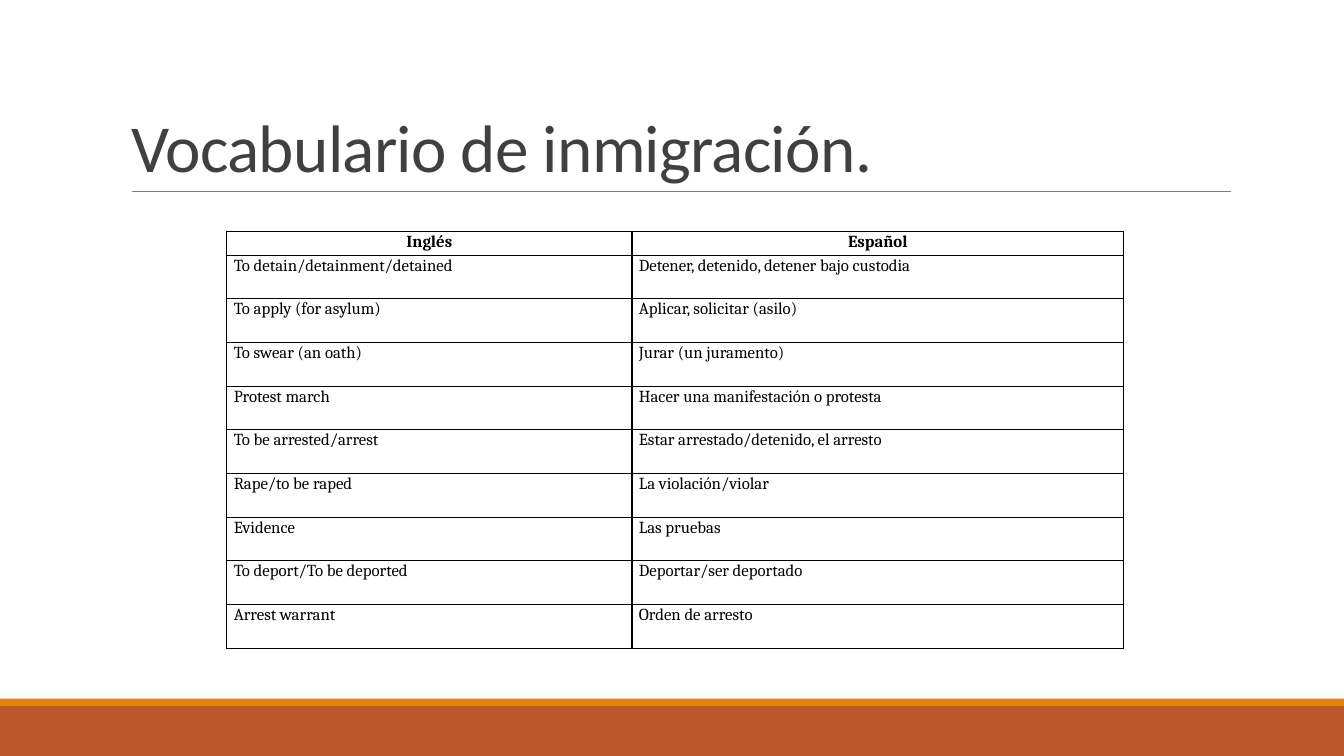
from lxml import etree
from pptx import Presentation
from pptx import util as u
from pptx.dml.color import RGBColor
from pptx.enum import shapes, text
from pptx.oxml.ns import qn

VOCABULARY = [
    ("Inglés", "Español"),
    ("To detain/detainment/detained", "Detener, detenido, detener bajo custodia"),
    ("To apply (for asylum)", "Aplicar, solicitar (asilo)"),
    ("To swear (an oath)", "Jurar (un juramento)"),
    ("Protest march", "Hacer una manifestación o protesta"),
    ("To be arrested/arrest", "Estar arrestado/detenido, el arresto"),
    ("Rape/to be raped", "La violación/violar"),
    ("Evidence", "Las pruebas"),
    ("To deport/To be deported", "Deportar/ser deportado"),
    ("Arrest warrant", "Orden de arresto"),
]
COLUMN_WIDTHS = (289.4, 351.4)
HEADER_HEIGHT, ROW_HEIGHT = 17.1, 31.2


def rgb(value):
    """Return the colour for a hex string."""
    return RGBColor.from_string(value)


def add_run(p, content, font, size, color, bold=False):
    """Add a formatted run to a paragraph."""
    r = p.add_run()
    r.text = content
    r.font.name, r.font.size, r.font.bold = font, u.Pt(size), bold
    r.font.color.rgb = rgb(color)
    return r


def add_title(s, content):
    """Fill and place the title placeholder."""
    sp = s.shapes.title
    sp.left, sp.top, sp.width, sp.height = u.Pt(86.4), u.Pt(22.6), u.Pt(792), u.Pt(114.2)
    tf = sp.text_frame
    tf.vertical_anchor = text.MSO_ANCHOR.BOTTOM
    p = tf.paragraphs[0]
    p.alignment = text.PP_ALIGN.LEFT
    p.line_spacing = 0.85
    r = add_run(p, content, "Calibri", 48, "404040")
    r.font._element.set("spc", "-50")


def add_band(s, top, height, color):
    """Add a full-width coloured band."""
    sp = s.shapes.add_shape(shapes.MSO_SHAPE.RECTANGLE, 0, u.Pt(top), u.Pt(960), u.Pt(height))
    sp.shadow.inherit = False
    sp.fill.solid()
    sp.fill.fore_color.rgb = rgb(color)
    sp.line.fill.background()


def add_rule(s, left, right, y):
    """Add the thin grey rule under the title."""
    cx = s.shapes.add_connector(shapes.MSO_CONNECTOR.STRAIGHT, u.Pt(left), u.Pt(y), u.Pt(right), u.Pt(y))
    cx.line.color.rgb = rgb("808080")
    cx.line.width = u.Pt(0.5)
    etree.SubElement(cx._element.spPr, qn("a:effectLst"))


def set_borders(cell, color, width):
    """Draw a solid border on all four sides of a cell."""
    tcPr = cell._tc.get_or_add_tcPr()
    for i, side in enumerate(("a:lnL", "a:lnR", "a:lnT", "a:lnB")):
        ln = etree.Element(qn(side), w=str(u.Pt(width)))
        fill = etree.SubElement(ln, qn("a:solidFill"))
        etree.SubElement(fill, qn("a:srgbClr"), val=color)
        tcPr.insert(i, ln)


def fill_cell(cell, content, header):
    """Write and format one vocabulary cell."""
    cell.margin_left = cell.margin_right = u.Pt(5)
    cell.margin_top, cell.margin_bottom = u.Pt(0.7), 0
    cell.fill.background()
    set_borders(cell, "000000", 1)
    p = cell.text_frame.paragraphs[0]
    p.alignment = text.PP_ALIGN.CENTER if header else text.PP_ALIGN.LEFT
    add_run(p, content, "Cambria", 12, "000000", header)


def add_vocabulary(s, left, top):
    """Add the two-language vocabulary table."""
    height = HEADER_HEIGHT + ROW_HEIGHT * (len(VOCABULARY) - 1)
    table = s.shapes.add_table(len(VOCABULARY), len(COLUMN_WIDTHS), u.Pt(left), u.Pt(top),
                               u.Pt(sum(COLUMN_WIDTHS)), u.Pt(height)).table
    table.first_row = table.horz_banding = False
    for column, width in zip(table.columns, COLUMN_WIDTHS):
        column.width = u.Pt(width)
    for i, (row, terms) in enumerate(zip(table.rows, VOCABULARY)):
        row.height = u.Pt(ROW_HEIGHT if i else HEADER_HEIGHT)
        for cell, term in zip(row.cells, terms):
            fill_cell(cell, term, i == 0)


def main():
    """Build and save the slide."""
    prs = Presentation()
    prs.slide_width, prs.slide_height = u.Pt(960), u.Pt(540)
    s = prs.slides.add_slide(prs.slide_layouts[5])
    add_band(s, 504, 36, "BD582C")
    add_band(s, 499, 5.5, "E48312")
    add_rule(s, 94.3, 879.1, 136.8)
    add_title(s, "Vocabulario de inmigración.")
    add_vocabulary(s, 162, 165.2)
    prs.save("out.pptx")


if __name__ == "__main__":
    main()
